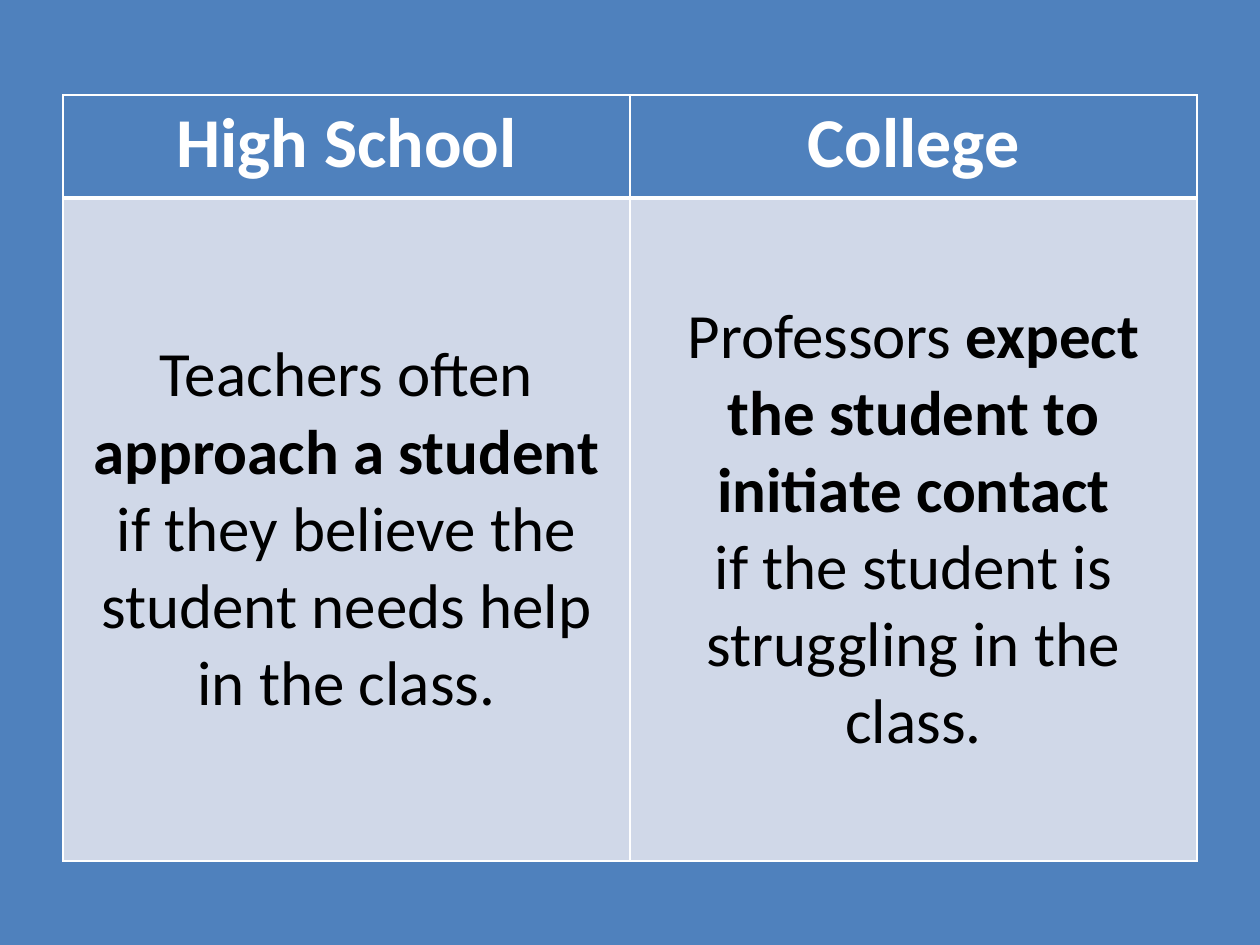
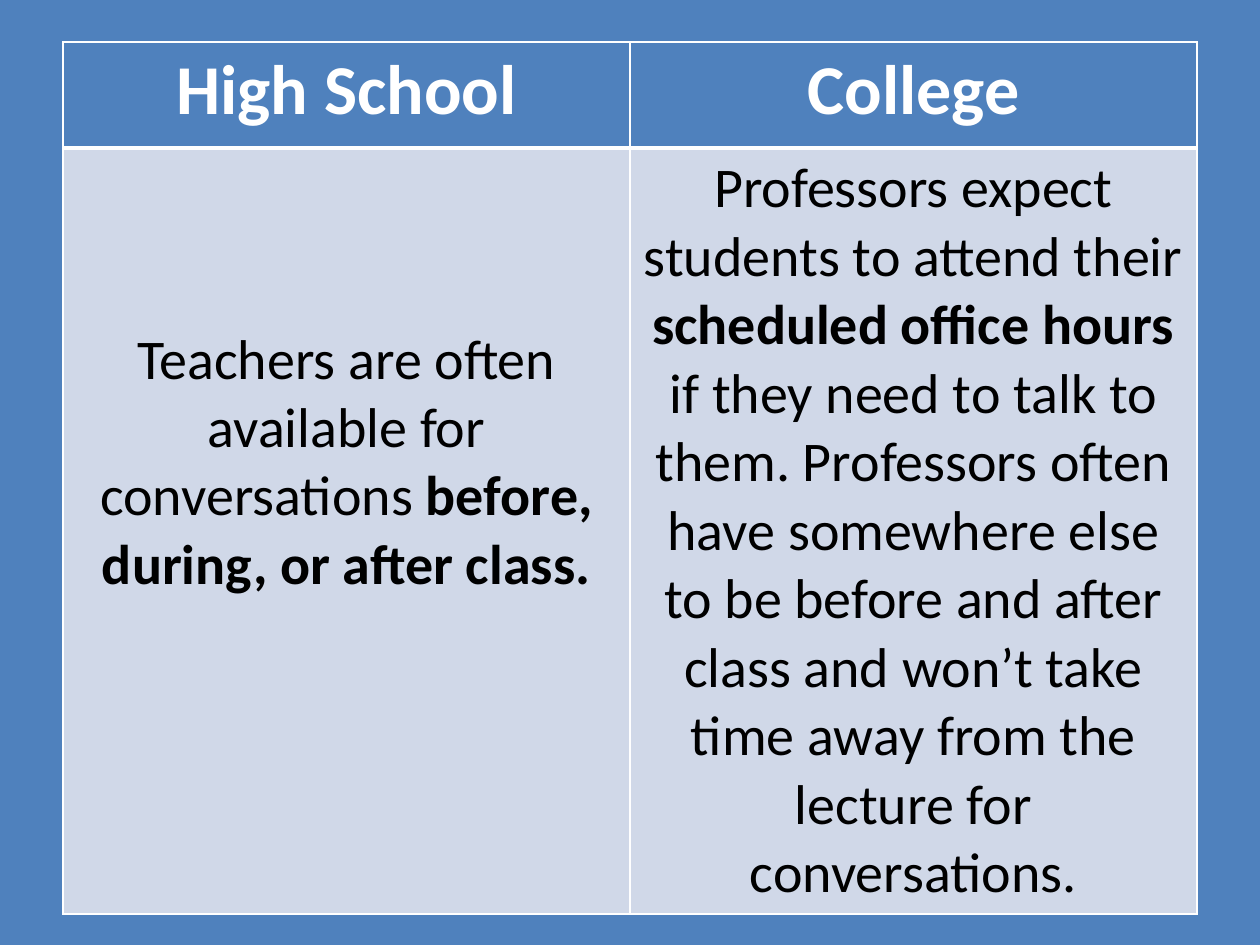
from dataclasses import dataclass

from lxml import etree
from pptx import Presentation
from pptx.dml.color import RGBColor
from pptx.enum.text import MSO_ANCHOR, PP_ALIGN
from pptx.oxml.ns import qn
from pptx.util import Emu, Pt

CENTER, MIDDLE, TOP = PP_ALIGN.CENTER, MSO_ANCHOR.MIDDLE, MSO_ANCHOR.TOP

HEADINGS = ("High School", "College")

# Statements are lists of (text, bold); "lift" is extra space below each one.
COMPARISONS = [
    {
        "top": 95, "heights": (103, 663), "size": 36, "lift": (0, 0),
        "statements": (
            [("Teachers often ", False),
             ("approach a student ", True),
             ("if they believe the student needs help in the class.", False)],
            [("Professors ", False),
             ("expect the student to initiate contact\n", True),
             ("if the student is struggling in the class.", False)],
        ),
    },
    {
        "top": 42, "heights": (106, 766), "size": 32, "lift": (137, 0),
        "statements": (
            [("Teachers are often available for conversations ", False),
             ("before, during, or after class.", True)],
            [("Professors expect students to attend their ", False),
             ("scheduled office hours ", True),
             ("if they need to talk to them. Professors often have somewhere "
              "else to be before and after class and won’t take time away "
              "from the lecture for conversations.", False)],
        ),
    },
]

SLIDE_WIDTH, SLIDE_HEIGHT = 1260, 945
SIDE_MARGIN = 63
CELL_PADDING = 6


@dataclass(frozen=True)
class Theme:
    font: str = "Calibri"
    blue: str = "4F81BD"
    pale: str = "D0D8E8"
    white: str = "FFFFFF"
    black: str = "000000"
    heading_size: int = 40
    thin: int = 1
    thick: int = 3


THEME = Theme()


def px(length):
    return Emu(round(length * 914400 / 126))


def color(value):
    return RGBColor.from_string(value)


def set_borders(cell, top, bottom):
    """Draw white cell edges; top and bottom are widths in points."""
    properties = cell._tc.get_or_add_tcPr()
    widths = {"L": THEME.thin, "R": THEME.thin, "T": top, "B": bottom}
    for side, width in widths.items():
        line = etree.SubElement(properties, qn(f"a:ln{side}"), w=str(Pt(width)))
        fill = etree.SubElement(line, qn("a:solidFill"))
        etree.SubElement(fill, qn("a:srgbClr"), val=THEME.white)


def fill_cell(cell, runs, size, text_color, background, anchor):
    cell.fill.solid()
    cell.fill.fore_color.rgb = color(background)
    cell.vertical_anchor = anchor
    paragraph = cell.text_frame.paragraphs[0]
    paragraph.alignment = CENTER
    font = paragraph.font
    font.name, font.size, font.color.rgb = THEME.font, Pt(size), color(text_color)
    for text, bold in runs:
        run = paragraph.add_run()
        run.text = text.rstrip("\n")
        run.font.name, run.font.size, run.font.bold = THEME.font, Pt(size), bold
        run.font.color.rgb = color(text_color)
        if text.endswith("\n"):
            paragraph.add_line_break()


def add_comparison(prs, comparison):
    slide = prs.slides.add_slide(prs.slide_layouts[6])
    slide.background.fill.solid()
    slide.background.fill.fore_color.rgb = color(THEME.blue)

    width = SLIDE_WIDTH - 2 * SIDE_MARGIN
    heights = comparison["heights"]
    table = slide.shapes.add_table(
        2, len(HEADINGS), px(SIDE_MARGIN), px(comparison["top"]),
        px(width), px(sum(heights))).table
    for row, height in zip(table.rows, heights):
        row.height = px(height)

    columns = zip(HEADINGS, comparison["statements"], comparison["lift"])
    for index, (heading, statement, lift) in enumerate(columns):
        table.columns[index].width = px(width / len(HEADINGS))
        header, body = table.cell(0, index), table.cell(1, index)
        set_borders(header, THEME.thin, THEME.thick)
        set_borders(body, THEME.thick, THEME.thin)
        fill_cell(header, [(heading, True)], THEME.heading_size,
                  THEME.white, THEME.blue, TOP)
        fill_cell(body, statement, comparison["size"],
                  THEME.black, THEME.pale, MIDDLE)
        body.margin_bottom = px(CELL_PADDING + lift)


def main():
    prs = Presentation()
    prs.slide_width, prs.slide_height = px(SLIDE_WIDTH), px(SLIDE_HEIGHT)
    for comparison in COMPARISONS:
        add_comparison(prs, comparison)
    prs.save("out.pptx")


if __name__ == "__main__":
    main()
